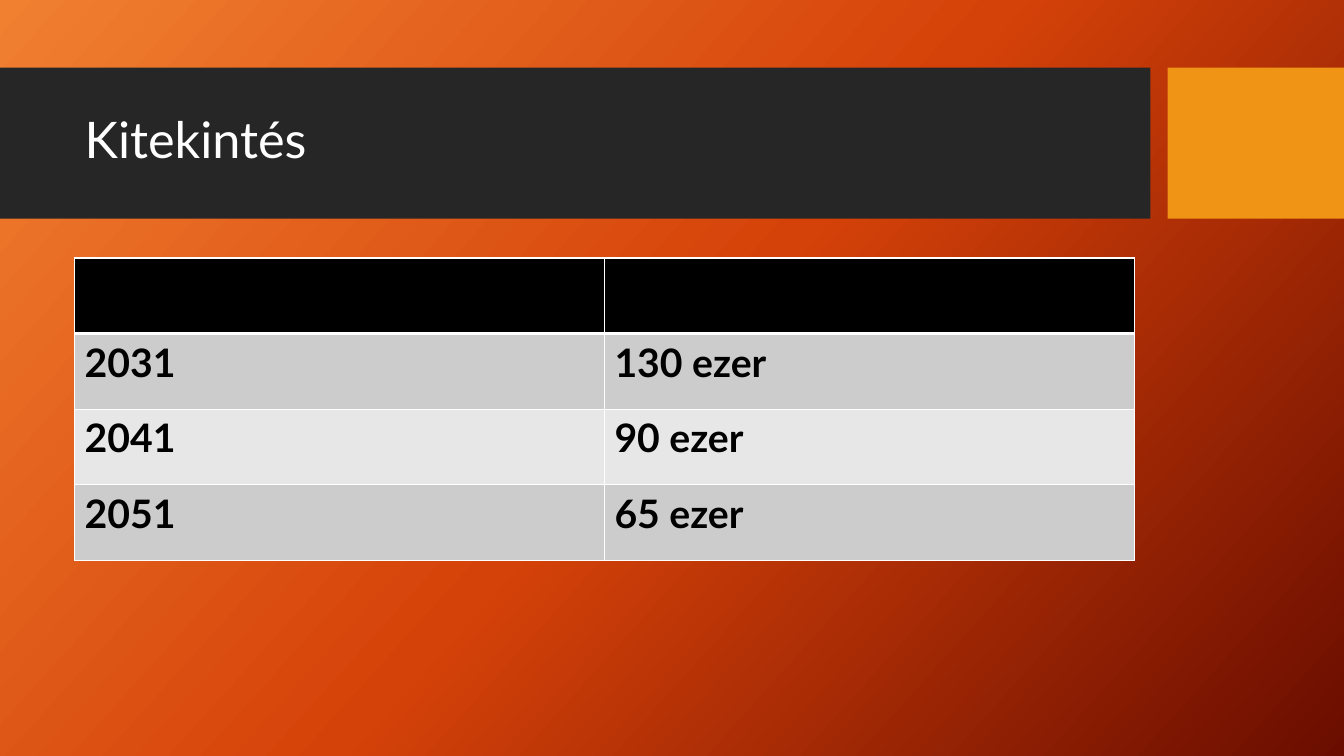
from copy import deepcopy
from dataclasses import dataclass

from pptx import Presentation
from pptx.dml.color import RGBColor
from pptx.enum.shapes import MSO_SHAPE
from pptx.enum.text import MSO_ANCHOR, PP_ALIGN
from pptx.oxml.ns import qn
from pptx.slide import Slide
from pptx.table import _Cell
from pptx.text.text import _Paragraph
from pptx.util import Inches, Pt
from lxml.etree import SubElement

FONT = "Lato"
WHITE = RGBColor(0xFF, 0xFF, 0xFF)
BLACK = RGBColor(0x00, 0x00, 0x00)
CHARCOAL = RGBColor(0x26, 0x26, 0x26)
AMBER = RGBColor(0xF0, 0x94, 0x15)
BAND_DARK = RGBColor(0xCC, 0xCC, 0xCC)
BAND_LIGHT = RGBColor(0xE7, 0xE7, 0xE7)
GRADIENT = [
    (0, RGBColor(0xF1, 0x80, 0x31)),
    (0.5, RGBColor(0xD5, 0x42, 0x09)),
    (1, RGBColor(0x6A, 0x0D, 0x00)),
]
GRADIENT_ANGLE = 42
MARGIN, CONTENT_WIDTH = 0.74, 10.51
ROW_HEIGHT = 0.75
ROWS = [("", ""), ("2031", "130 ezer"), ("2041", "90 ezer"), ("2051", "65 ezer")]


@dataclass
class Bar:
    left: float
    width: float
    color: RGBColor


BARS = [Bar(0, 11.41, CHARCOAL), Bar(11.58, 1.75, AMBER)]


def set_background(slide: Slide) -> None:
    fill = slide.background.fill
    fill.gradient()
    fill.gradient_angle = 360 - GRADIENT_ANGLE
    stop_list = next(slide._element.iter(qn("a:gsLst")))
    stop_list.insert(1, deepcopy(stop_list[0]))
    for stop, (position, color) in zip(fill.gradient_stops, GRADIENT):
        stop.position = position
        stop.color.rgb = color


def add_bar(slide: Slide, bar: Bar, level: int) -> None:
    """Draw a title bar behind the title, at the given stacking level."""
    sp = slide.shapes.add_shape(MSO_SHAPE.RECTANGLE, Inches(bar.left), Inches(0.67),
                                Inches(bar.width), Inches(1.5))
    sp.shadow.inherit = False
    sp.fill.solid()
    sp.fill.fore_color.rgb = bar.color
    sp.line.fill.background()
    slide.shapes._spTree.insert(2 + level, sp._element)


def set_font(p: _Paragraph, size: int, color: RGBColor, bold: bool) -> None:
    p.font.name = FONT
    p.font.size = Pt(size)
    p.font.bold = bold
    p.font.color.rgb = color


def add_title(slide: Slide, text: str) -> None:
    title = slide.shapes.title
    title.left, title.top = Inches(MARGIN), Inches(0.82)
    title.width, title.height = Inches(CONTENT_WIDTH), Inches(1.18)
    tf = title.text_frame
    tf.text = text
    tf.vertical_anchor = MSO_ANCHOR.MIDDLE
    p = tf.paragraphs[0]
    p.alignment = PP_ALIGN.LEFT
    p.line_spacing = 0.9
    set_font(p, 36, WHITE, False)


def set_borders(cell: _Cell, top: int, bottom: int) -> None:
    """Give the cell white borders, 1 pt at the sides."""
    tc_pr = cell._tc.get_or_add_tcPr()
    widths = {"a:lnL": 1, "a:lnR": 1, "a:lnT": top, "a:lnB": bottom}
    for i, (tag, width) in enumerate(widths.items()):
        ln = tc_pr.makeelement(qn(tag), {"w": str(Pt(width))})
        fill = SubElement(ln, qn("a:solidFill"))
        SubElement(fill, qn("a:srgbClr"), val=str(WHITE))
        tc_pr.insert(i, ln)


def add_forecast_table(slide: Slide) -> None:
    frame = slide.shapes.add_table(len(ROWS), 2, Inches(MARGIN), Inches(2.56),
                                   Inches(CONTENT_WIDTH), Inches(ROW_HEIGHT * len(ROWS)))
    table = frame.table
    for i, values in enumerate(ROWS):
        band = BLACK if i == 0 else BAND_DARK if i % 2 else BAND_LIGHT
        for j, value in enumerate(values):
            cell = table.cell(i, j)
            cell.text = value
            cell.fill.solid()
            cell.fill.fore_color.rgb = band
            set_font(cell.text_frame.paragraphs[0], 28, BLACK, True)
            set_borders(cell, top=3 if i == 1 else 1, bottom=3 if i == 0 else 1)


def main() -> None:
    prs = Presentation()
    prs.slide_width, prs.slide_height = Inches(13.33), Inches(7.5)
    slide = prs.slides.add_slide(prs.slide_layouts.get_by_name("Title Only"))
    set_background(slide)
    for level, bar in enumerate(BARS):
        add_bar(slide, bar, level)
    add_title(slide, "Kitekintés")
    add_forecast_table(slide)
    prs.save("out.pptx")


if __name__ == "__main__":
    main()
